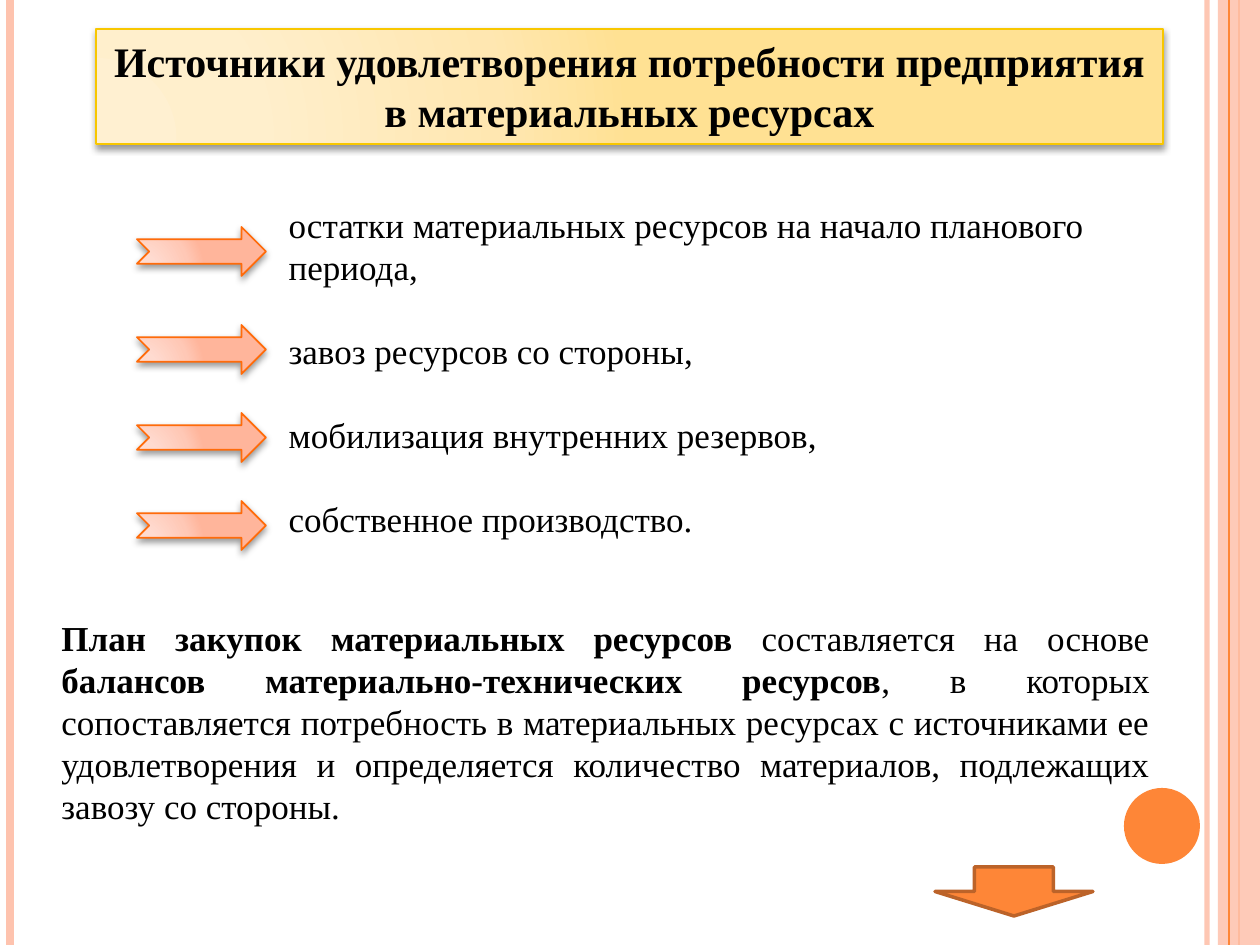
import pptx
import pptx.util
import pptx.dml.color
import pptx.enum.shapes
import pptx.enum.text
import pptx.oxml
import pptx.oxml.ns
from lxml import etree

RGB = pptx.dml.color.RGBColor
SHAPE = pptx.enum.shapes.MSO_SHAPE
ALIGN = pptx.enum.text.PP_ALIGN
ANCHOR = pptx.enum.text.MSO_ANCHOR
FIT = pptx.enum.text.MSO_AUTO_SIZE
qn = pptx.oxml.ns.qn

WIDTH, HEIGHT = 1260, 945
SCALE = 914400 / 126
FONT = "Times New Roman"

BLACK = RGB(0x00, 0x00, 0x00)
ORANGE = RGB(0xFE, 0x86, 0x37)
PEACH = RGB(0xFE, 0xC3, 0xAE)
BROWN = RGB(0xBC, 0x63, 0x29)
GOLD = RGB(0xF8, 0xC7, 0x00)
DEEP_ORANGE = RGB(0xFF, 0x6B, 0x0A)
STOPS = (0, 30, 75, 100)
YELLOW_FADE = (RGB(0xFF, 0xF0, 0xD1), RGB(0xFF, 0xEF, 0xCC),
               RGB(0xFF, 0xE7, 0xB1), RGB(0xFF, 0xE1, 0x93))
PEACH_FADE = (RGB(0xFF, 0xDE, 0xD5), RGB(0xFF, 0xDB, 0xD0),
              RGB(0xFF, 0xC8, 0xB6), RGB(0xFF, 0xB5, 0x9B))

# Content: paragraphs are lists of (text, bold) spans
TITLE = [[("Источники удовлетворения потребности предприятия", True)],
         [("в материальных ресурсах", True)]]
SOURCES = [[("остатки материальных ресурсов на начало планового периода,", False)],
           [("завоз ресурсов со стороны,", False)],
           [("мобилизация внутренних резервов,", False)],
           [("собственное производство.", False)]]
PLAN = [[("План закупок материальных ресурсов", True),
         (" составляется на основе ", False),
         ("балансов материально-технических ресурсов", True),
         (", в которых сопоставляется потребность в материальных ресурсах "
          "с источниками ее удовлетворения и определяется количество материалов, "
          "подлежащих завозу со стороны.", False)]]

# Vertical rules: x, colour, points, opacity in percent
RULES = [(1207, PEACH, 3, 93), (10, PEACH, 4.5, 100), (1239, ORANGE, 1.5, 100)]
THIN_RULE = (1229, ORANGE, 0.75, 100)
ARROW_TOPS = [227] + [325 + 88 * step for step in range(3)]


def px(value):
    return pptx.util.Emu(round(value * SCALE))


def place(box, left, top, width, height):
    box.left, box.top, box.width, box.height = map(px, (left, top, width, height))


def set_opacity(fill_element, percent):
    color = fill_element.find(".//" + qn("a:srgbClr"))
    etree.SubElement(color, qn("a:alpha"), val=str(percent * 1000))


def add_rule(page, x, color, points, opacity):
    rule = page.shapes.add_connector(
        pptx.enum.shapes.MSO_CONNECTOR.STRAIGHT, px(x), 0, px(x), px(HEIGHT))
    rule.line.color.rgb = color
    rule.line.width = pptx.util.Pt(points)
    properties = rule._element.spPr
    if opacity < 100:
        set_opacity(properties.find(qn("a:ln")), opacity)
    etree.SubElement(properties, qn("a:effectLst"))


def add_shape(page, kind, area, fill=None, line=None, points=1):
    shape = page.shapes.add_shape(kind, *map(px, area))
    shape.shadow.inherit = False
    if fill is not None:
        shape.fill.solid()
        shape.fill.fore_color.rgb = fill
    if line is None:
        shape.line.fill.background()
    else:
        shape.line.color.rgb = line
        shape.line.width = pptx.util.Pt(points)
    return shape


def make_glossy(shape, colors, line):
    """Radial gradient, thin outline and a soft shadow below."""
    shape.line.color.rgb = line
    shape.line.width = pptx.util.Pt(1)
    shape.shadow.inherit = False
    stops = "".join(f'<a:gs pos="{stop * 1000}"><a:srgbClr val="{color}"/></a:gs>'
                    for stop, color in zip(STOPS, colors))
    gradient = pptx.oxml.parse_xml(
        f'<a:gradFill {pptx.oxml.ns.nsdecls("a")} rotWithShape="1"><a:gsLst>{stops}</a:gsLst>'
        '<a:path path="circle"><a:fillToRect l="5000" t="100000" r="120000" b="10000"/>'
        '</a:path></a:gradFill>')
    properties = shape._element.spPr
    properties.find(qn("a:ln")).addprevious(gradient)
    shadow = etree.SubElement(properties.find(qn("a:effectLst")), qn("a:outerShdw"),
                              blurRad="50800", dist="25400", dir="5400000", rotWithShape="0")
    color = etree.SubElement(shadow, qn("a:srgbClr"), val="000000")
    etree.SubElement(color, qn("a:alpha"), val="40000")


def write(box, paragraphs, size=20, align=ALIGN.LEFT, gap=0, wrap=True, anchor=ANCHOR.TOP):
    frame = box.text_frame
    frame.word_wrap = wrap
    frame.auto_size = FIT.SHAPE_TO_FIT_TEXT
    frame.vertical_anchor = anchor
    for index, spans in enumerate(paragraphs):
        para = frame.paragraphs[0] if index == 0 else frame.add_paragraph()
        para.alignment = align
        para.space_before = pptx.util.Pt(gap if index else 0)
        settings = para._p.get_or_add_pPr()
        settings.set("marL", "0")
        settings.set("indent", "0")
        etree.SubElement(settings, qn("a:buNone"))
        for text, bold in spans:
            span = para.add_run()
            span.text = text
            span.font.name = FONT
            span.font.size = pptx.util.Pt(size)
            span.font.bold = bold
            span.font.color.rgb = BLACK


def main():
    deck = pptx.Presentation()
    deck.slide_width, deck.slide_height = px(WIDTH), px(HEIGHT)
    page = deck.slides.add_slide(deck.slide_layouts[1])

    # Side decoration
    for rule in RULES:
        add_rule(page, *rule)
    band = add_shape(page, SHAPE.RECTANGLE, (1218, 0, 42, HEIGHT), PEACH)
    set_opacity(band._element.spPr.find(qn("a:solidFill")), 87)
    add_rule(page, *THIN_RULE)
    add_shape(page, SHAPE.OVAL, (1124, 788, 76, 76), ORANGE)

    # Title and list of sources
    title, body = page.shapes.title, page.placeholders[1]
    place(title, 96, 29, 1067, 115)
    make_glossy(title, YELLOW_FADE, GOLD)
    write(title, TITLE, size=24, align=ALIGN.CENTER, wrap=False)
    place(body, 276, 197, 867, 352)
    write(body, SOURCES, gap=24)

    # One arrow for each source
    for top in ARROW_TOPS:
        arrow = add_shape(page, SHAPE.NOTCHED_RIGHT_ARROW, (137, top, 129, 49))
        make_glossy(arrow, PEACH_FADE, DEEP_ORANGE)

    # Purchase plan and the arrow below it
    plan = page.shapes.add_textbox(*map(px, (49, 610, 1113, 224)))
    write(plan, PLAN, align=ALIGN.JUSTIFY)
    add_shape(page, SHAPE.DOWN_ARROW, (935, 867, 158, 49), ORANGE, BROWN, 2)

    deck.save("out.pptx")


if __name__ == "__main__":
    main()
